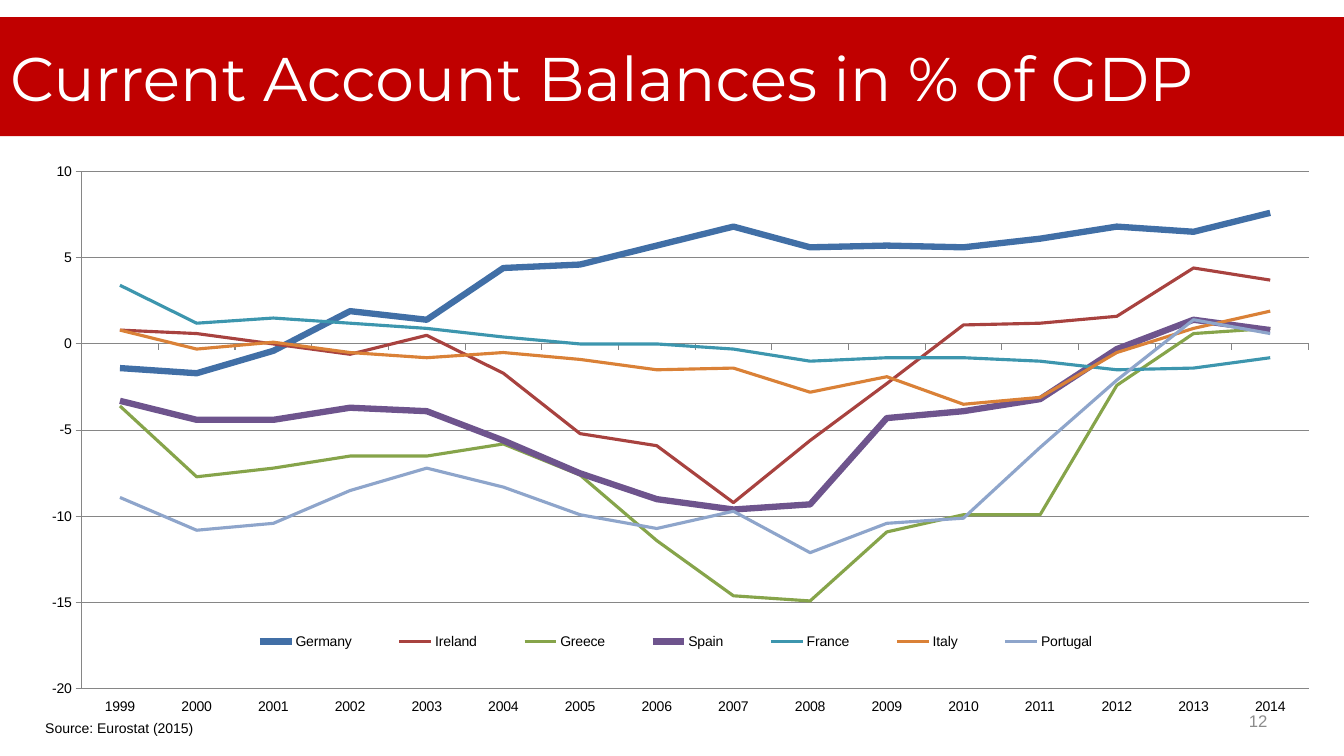
from dataclasses import dataclass

from lxml.etree import SubElement
from pptx import Presentation
from pptx.chart.data import CategoryChartData
from pptx.dml.color import RGBColor
from pptx.enum.chart import XL_CHART_TYPE, XL_LEGEND_POSITION, XL_TICK_LABEL_POSITION, XL_TICK_MARK
from pptx.enum.text import MSO_ANCHOR, MSO_AUTO_SIZE, PP_ALIGN
from pptx.oxml.ns import qn
from pptx.util import Inches, Pt

RED = RGBColor(0xC0, 0x00, 0x00)
WHITE = RGBColor(0xFF, 0xFF, 0xFF)
BLACK = RGBColor(0x00, 0x00, 0x00)
GRAY = RGBColor(0x8C, 0x8C, 0x8C)
AXIS_GRAY = RGBColor(0x86, 0x86, 0x86)
BLUE = RGBColor(0x41, 0x6F, 0xA6)
BRICK = RGBColor(0xA8, 0x42, 0x3F)
GREEN = RGBColor(0x86, 0xA4, 0x4A)
PURPLE = RGBColor(0x6E, 0x54, 0x8D)
TEAL = RGBColor(0x3D, 0x96, 0xAE)
ORANGE = RGBColor(0xDA, 0x81, 0x37)
PALE_BLUE = RGBColor(0x8E, 0xA5, 0xCB)

THIN, THICK = 2.25, 4.5


@dataclass
class Country:
    name: str
    color: RGBColor
    balances: list[float]
    width: float = THIN


YEARS = [str(year) for year in range(1999, 2015)]
COUNTRIES = [
    Country("Germany", BLUE, [-1.4, -1.7, -0.4, 1.9, 1.4, 4.4, 4.6, 5.7,
                              6.8, 5.6, 5.7, 5.6, 6.1, 6.8, 6.5, 7.6], THICK),
    Country("Ireland", BRICK, [0.8, 0.6, 0, -0.6, 0.5, -1.7, -5.2, -5.9,
                               -9.2, -5.6, -2.3, 1.1, 1.2, 1.6, 4.4, 3.7]),
    Country("Greece", GREEN, [-3.6, -7.7, -7.2, -6.5, -6.5, -5.8, -7.6, -11.4,
                              -14.6, -14.9, -10.9, -9.9, -9.9, -2.4, 0.6, 0.9]),
    Country("Spain", PURPLE, [-3.3, -4.4, -4.4, -3.7, -3.9, -5.6, -7.5, -9,
                              -9.6, -9.3, -4.3, -3.9, -3.2, -0.3, 1.4, 0.8], THICK),
    Country("France", TEAL, [3.4, 1.2, 1.5, 1.2, 0.9, 0.4, 0, 0,
                             -0.3, -1, -0.8, -0.8, -1, -1.5, -1.4, -0.8]),
    Country("Italy", ORANGE, [0.8, -0.3, 0.1, -0.5, -0.8, -0.5, -0.9, -1.5,
                              -1.4, -2.8, -1.9, -3.5, -3.1, -0.5, 0.9, 1.9]),
    Country("Portugal", PALE_BLUE, [-8.9, -10.8, -10.4, -8.5, -7.2, -8.3, -9.9, -10.7,
                                    -9.7, -12.1, -10.4, -10.1, -6, -2.1, 1.4, 0.6]),
]


def place(sp, left: float, top: float, width: float, height: float) -> None:
    sp.left, sp.top, sp.width, sp.height = map(Inches, (left, top, width, height))


def write(tf, text: str, font: str, size: float, color: RGBColor, align=PP_ALIGN.LEFT) -> None:
    p = tf.paragraphs[0]
    p.text = text
    p.alignment = align
    p.font.name, p.font.size = font, Pt(size)
    p.font.color.rgb = color


def set_layout(parent, x: float, y: float, w: float, h: float, inner: bool = False) -> None:
    """Fix a plot area or legend at fractions of the chart's size."""
    layout = parent.find(qn("c:layout"))
    if layout is None:
        layout = SubElement(parent, qn("c:layout"))
        before = parent.find(qn("c:legendPos"))
        if before is None:
            parent.insert(0, layout)
        else:
            before.addnext(layout)
    manual = SubElement(layout, qn("c:manualLayout"))
    settings = {"layoutTarget": "inner"} if inner else {}
    settings |= {"xMode": "edge", "yMode": "edge", "x": x, "y": y, "w": w, "h": h}
    for tag, value in settings.items():
        SubElement(manual, qn(f"c:{tag}")).set("val", str(value))


def style_line(line, color: RGBColor, width: float) -> None:
    line.color.rgb = color
    line.width = Pt(width)


def add_balance_chart(s) -> None:
    data = CategoryChartData()
    data.categories = YEARS
    for country in COUNTRIES:
        data.add_series(country.name, country.balances)
    box = map(Inches, (0.38, 1.54, 12.65, 5.55))
    chart = s.shapes.add_chart(XL_CHART_TYPE.LINE, *box, data).chart
    chart.has_title = False
    chart.font.name, chart.font.size = "Arial", Pt(10)
    chart.font.color.rgb = BLACK
    chart.plots[0].vary_by_categories = False
    for series, country in zip(chart.plots[0].series, COUNTRIES):
        series.smooth = False
        style_line(series.format.line, country.color, country.width)

    for axis in (chart.category_axis, chart.value_axis):
        axis.major_tick_mark = XL_TICK_MARK.OUTSIDE
        axis.minor_tick_mark = XL_TICK_MARK.NONE
        style_line(axis.format.line, AXIS_GRAY, 0.75)
    chart.category_axis.tick_label_position = XL_TICK_LABEL_POSITION.LOW
    values = chart.value_axis
    values.minimum_scale, values.maximum_scale, values.major_unit = -20, 10, 5
    values.tick_labels.number_format = "General"
    values.tick_labels.number_format_is_linked = False
    values.has_major_gridlines = True
    style_line(values.major_gridlines.format.line, AXIS_GRAY, 0.75)

    chart.has_legend = True
    legend = chart.legend
    legend.position = XL_LEGEND_POSITION.RIGHT
    legend.include_in_layout = False
    legend.font.name, legend.font.size = "Arial", Pt(10)
    plot_area = chart.plots[0]._element.getparent()
    set_layout(plot_area, 0.034, 0.029, 0.962, 0.926, inner=True)
    set_layout(legend._element, 0.14, 0.84, 0.72, 0.06)


def main() -> None:
    prs = Presentation()
    prs.slide_width, prs.slide_height = Inches(13.33), Inches(7.5)
    s = prs.slides.add_slide(prs.slide_layouts[5])

    title = s.shapes.title
    place(title, 0, 0.17, 13.33, 1.18)
    title.fill.solid()
    title.fill.fore_color.rgb = RED
    tf = title.text_frame
    tf.auto_size = MSO_AUTO_SIZE.NONE
    tf.vertical_anchor = MSO_ANCHOR.MIDDLE
    write(tf, "Current Account Balances in % of GDP", "Montserrat", 44, WHITE)

    source = s.shapes.add_textbox(*map(Inches, (0.35, 7.09, 1.72, 0.27)))
    source.text_frame.word_wrap = False
    source.text_frame.auto_size = MSO_AUTO_SIZE.SHAPE_TO_FIT_TEXT
    write(source.text_frame, "Source: Eurostat (2015)", "Arial", 10, BLACK)

    number = s.shapes.add_textbox(*map(Inches, (9.56, 6.95, 3.11, 0.4)))
    number.text_frame.word_wrap = True
    number.text_frame.vertical_anchor = MSO_ANCHOR.MIDDLE
    write(number.text_frame, "12", "Arial", 12, GRAY, PP_ALIGN.RIGHT)

    add_balance_chart(s)
    prs.save("out.pptx")


if __name__ == "__main__":
    main()
